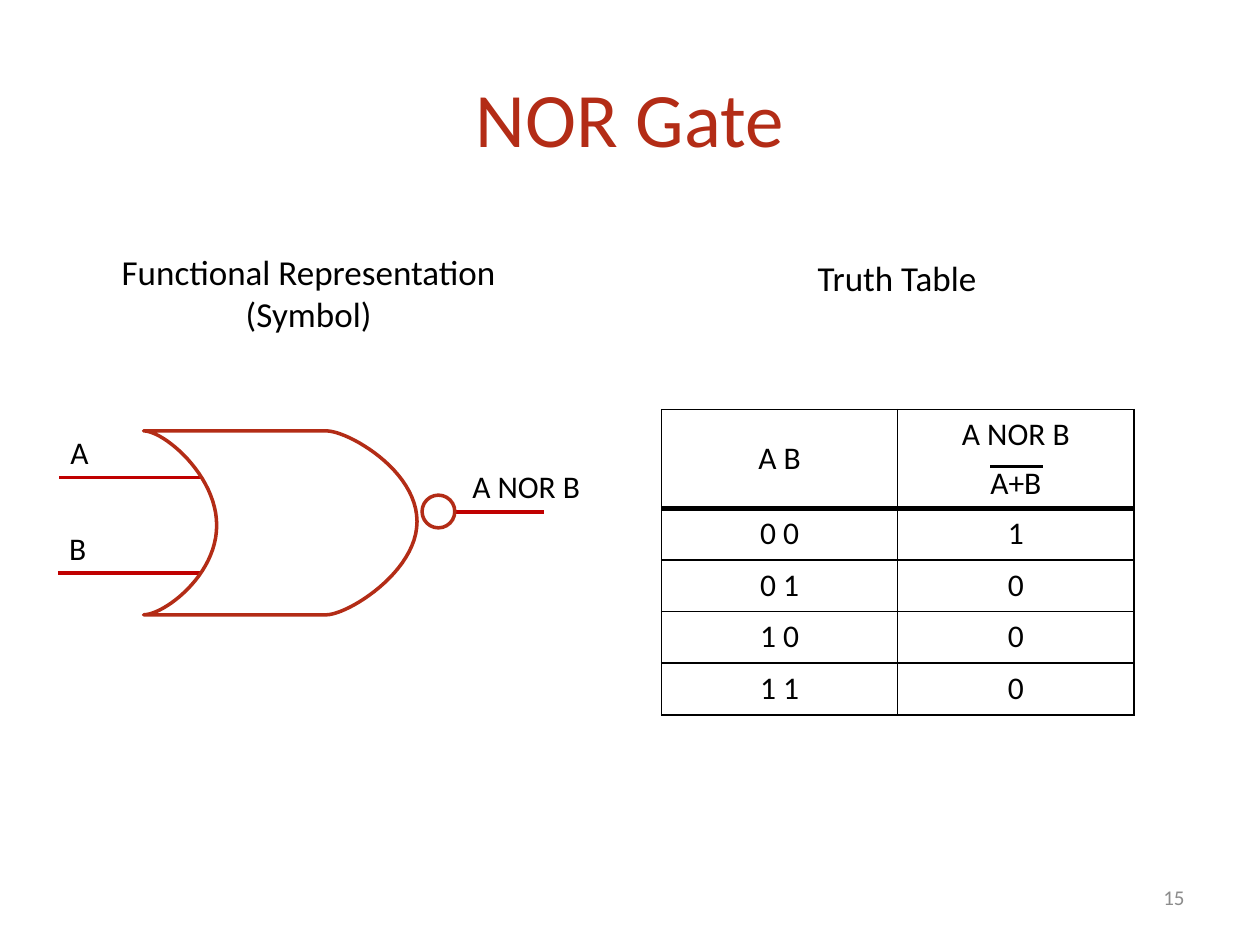
import pptx
import pptx.dml.color
import pptx.enum.shapes
import pptx.enum.text
import pptx.oxml
import pptx.oxml.ns
import pptx.util
from pptx.util import Inches

ALIGN = pptx.enum.text.PP_ALIGN
ANCHOR = pptx.enum.text.MSO_ANCHOR
BLACK, WHITE, GREY = "000000", "FFFFFF", "8C8C8C"
BRICK, RED = "B32C16", "C00000"


def color(value):
    return pptx.dml.color.RGBColor.from_string(value)


def write(frame, text, size=18, fill=BLACK, align=ALIGN.LEFT, anchor=ANCHOR.TOP, after=0):
    frame.word_wrap = True
    frame.vertical_anchor = anchor
    for index, line in enumerate(text.split("\n")):
        para = frame.paragraphs[0] if index == 0 else frame.add_paragraph()
        para.alignment = align
        para.space_after = pptx.util.Pt(after)
        span = para.add_run()
        span.text = line
        span.font.name = "Calibri"
        span.font.size = pptx.util.Pt(size)
        span.font.color.rgb = color(fill)


def border(cell, side, width):
    namespace = pptx.oxml.ns.nsdecls("a")
    cell._tc.get_or_add_tcPr().append(pptx.oxml.parse_xml(
        f'<a:ln{side} {namespace} w="{pptx.util.Pt(width)}"><a:solidFill>'
        f'<a:srgbClr val="{BLACK}"/></a:solidFill></a:ln{side}>'))


def curve(start, first, second, end, steps=24):
    points = []
    for step in range(1, steps + 1):
        t = step / steps
        weights = ((1 - t) ** 3, 3 * t * (1 - t) ** 2, 3 * t ** 2 * (1 - t), t ** 3)
        points.append(tuple(
            sum(weight * value for weight, value in zip(weights, axis))
            for axis in zip(start, first, second, end)))
    return points


class GateSlide:
    def __init__(self, deck):
        self.page = deck.slides.add_slide(deck.slide_layouts[5])

    def title(self, text, left, top, width, height):
        box = self.page.shapes.title
        box.left, box.top = Inches(left), Inches(top)
        box.width, box.height = Inches(width), Inches(height)
        write(box.text_frame, text, size=44, fill=BRICK, align=ALIGN.CENTER, anchor=ANCHOR.MIDDLE)

    def label(self, text, left, top, width, height, **style):
        box = self.page.shapes.add_textbox(
            Inches(left), Inches(top), Inches(width), Inches(height))
        write(box.text_frame, text, **style)

    def wire(self, left, right, level, fill=RED, width=2.25):
        line = self.page.shapes.add_connector(
            pptx.enum.shapes.MSO_CONNECTOR.STRAIGHT,
            Inches(left), Inches(level), Inches(right), Inches(level))
        line.line.color.rgb = color(fill)
        line.line.width = pptx.util.Pt(width)
        line._element.spPr.append(pptx.oxml.parse_xml(
            f'<a:effectLst {pptx.oxml.ns.nsdecls("a")}/>'))

    def paint(self, shape):
        shape.shadow.inherit = False
        shape.fill.solid()
        shape.fill.fore_color.rgb = color(WHITE)
        shape.line.color.rgb = color(BRICK)
        shape.line.width = pptx.util.Pt(2)

    def bubble(self, left, top, size):
        self.paint(self.page.shapes.add_shape(
            pptx.enum.shapes.MSO_SHAPE.OVAL,
            Inches(left), Inches(top), Inches(size), Inches(size)))

    def outline(self, points):
        corners = [(Inches(across), Inches(down)) for across, down in points]
        builder = self.page.shapes.build_freeform(*corners[0])
        builder.add_line_segments(corners[1:], close=True)
        self.paint(builder.convert_to_shape())

    def truth_table(self, rows, left, top, width, header, row_height):
        columns = len(rows[0])
        table = self.page.shapes.add_table(
            len(rows), columns, Inches(left), Inches(top), Inches(width),
            Inches(header + row_height * (len(rows) - 1))).table
        table.first_row = table.horz_banding = False
        for column in table.columns:
            column.width = Inches(width / columns)
        for index, values in enumerate(rows):
            table.rows[index].height = Inches(row_height if index else header)
            for position, value in enumerate(values):
                cell = table.cell(index, position)
                for side in "LRTB":
                    divider = (index, side) in ((0, "B"), (1, "T"))
                    border(cell, side, 3 if divider else 1)
                cell.fill.background()
                centred = index == 0 and position == 0
                cell.vertical_anchor = ANCHOR.MIDDLE if centred else ANCHOR.TOP
                write(cell.text_frame, value, align=ALIGN.CENTER,
                      anchor=cell.vertical_anchor, after=0 if index else 6)


def main():
    deck = pptx.Presentation()
    deck.slide_width, deck.slide_height = Inches(10), Inches(7.5)
    slide = GateSlide(deck)

    slide.title("NOR Gate", 0.5, 0.3, 9, 1.25)
    slide.label("15", 7.17, 6.92, 2.33, 0.4, size=12, fill=GREY,
                align=ALIGN.RIGHT, anchor=ANCHOR.MIDDLE)
    slide.wire(3.52, 4.32, 4.06)
    slide.label("Functional Representation\n(Symbol)", 0.58, 1.94, 3.74, 0.77,
                size=20, align=ALIGN.CENTER)
    slide.truth_table(
        [("A B", "A NOR B\nA+B"), ("0 0", "1"), ("0 1", "0"), ("1 0", "0"), ("1 1", "0")],
        5.25, 3.25, 3.75, header=0.78, row_height=0.41)
    slide.label("Truth Table", 5.25, 1.99, 3.74, 0.44, size=20, align=ALIGN.CENTER)
    slide.label("A NOR B", 3.65, 3.66, 1.44, 0.4)
    slide.bubble(3.35, 3.93, 0.26)
    slide.wire(7.86, 8.28, 3.7, fill=BLACK, width=1.5)
    for name, left, level in (("A", 0.47, 3.79), ("B", 0.46, 4.55)):
        slide.wire(left, 1.62, level)
        slide.label(name, left - 0.01, level - 0.4, 0.69, 0.4)

    top_left, bottom_left = (1.14, 3.42), (1.14, 4.88)
    top_right, bottom_right = (2.59, 3.42), (2.59, 4.88)
    inner, tip = (1.72, 4.17), (3.31, 4.14)
    slide.outline(
        [top_right, top_left]
        + curve(top_left, (1.3, 3.42), (1.72, 3.77), inner)
        + curve(inner, (1.72, 4.57), (1.3, 4.88), bottom_left)
        + [bottom_right]
        + curve(bottom_right, (2.76, 4.88), (3.31, 4.54), tip)
        + curve(tip, (3.31, 3.73), (2.76, 3.42), top_right))

    deck.save("out.pptx")


if __name__ == "__main__":
    main()
